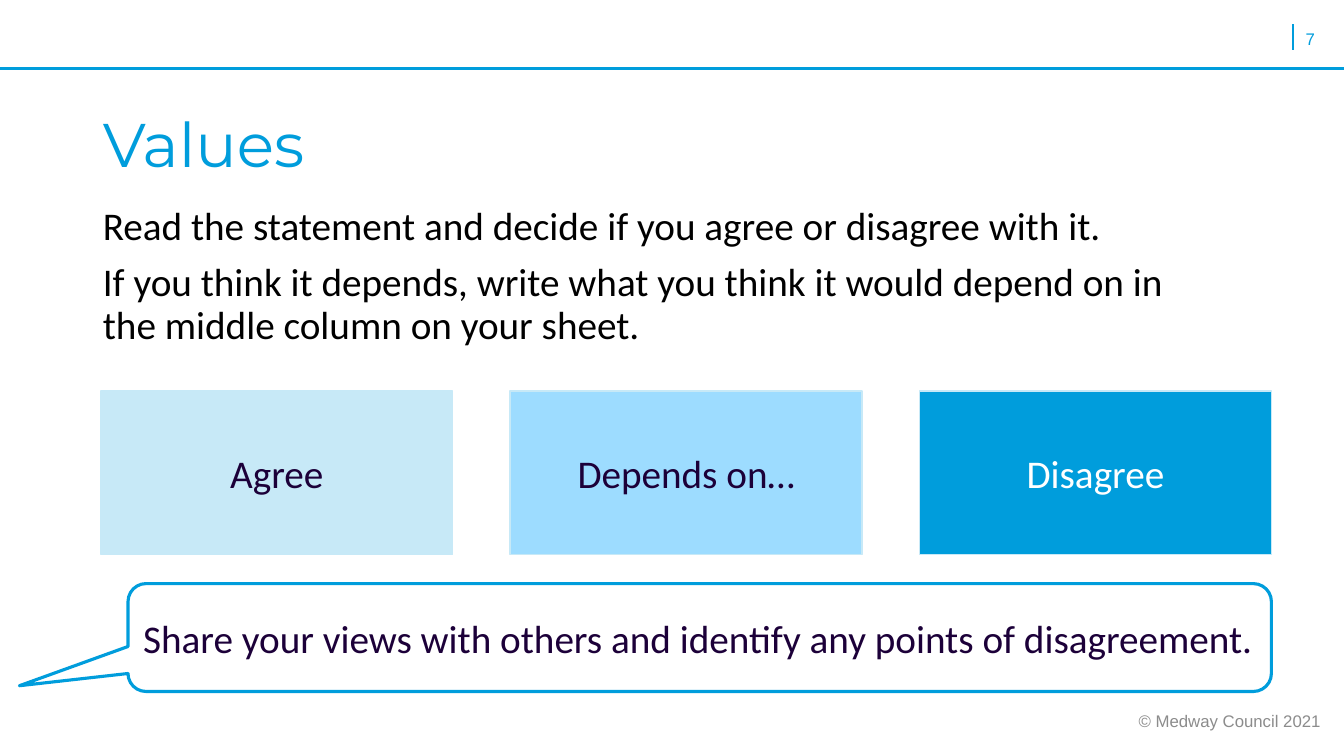
from lxml import etree
from pptx import Presentation
from pptx.dml.color import RGBColor
from pptx.enum.shapes import MSO_CONNECTOR, MSO_SHAPE
from pptx.enum.text import MSO_ANCHOR, MSO_AUTO_SIZE, PP_ALIGN
from pptx.oxml.ns import qn
from pptx.util import Inches, Pt

LEFT, CENTER, RIGHT = PP_ALIGN.LEFT, PP_ALIGN.CENTER, PP_ALIGN.RIGHT
TOP, MIDDLE = MSO_ANCHOR.TOP, MSO_ANCHOR.MIDDLE
NO_AUTOFIT = MSO_AUTO_SIZE.NONE
STRAIGHT = MSO_CONNECTOR.STRAIGHT
RECT, CALLOUT = MSO_SHAPE.RECTANGLE, MSO_SHAPE.ROUNDED_RECTANGULAR_CALLOUT

BLUE, PALE, SKY = "009DDC", "C7E9F7", "9DDCFF"
INK, BLACK, WHITE, GREY = "1C0039", "000000", "FFFFFF", "8C8C8C"


def rgb(value):
    return RGBColor.from_string(value)


class SlideBuilder:
    """Holds the fonts and the current slide."""

    heading_font, body_font, small_font = "Montserrat", "Calibri", "Arial"

    def __init__(self, prs):
        self.slide = prs.slides.add_slide(prs.slide_layouts[1])

    def set_text(self, sp, lines, size, color, font, align=LEFT, anchor=TOP,
                 spacing=1.0, gap=0):
        tf = sp.text_frame
        tf.word_wrap = True
        tf.auto_size = NO_AUTOFIT
        tf.vertical_anchor = anchor
        for i, line in enumerate(lines):
            p = tf.paragraphs[0] if i == 0 else tf.add_paragraph()
            pPr = p._p.get_or_add_pPr()
            pPr.set("marL", "0")
            pPr.set("indent", "0")
            etree.SubElement(pPr, qn("a:buNone"))
            p.alignment = align
            p.line_spacing = spacing
            p.space_before = Pt(gap if i else 0)
            r = p.add_run()
            r.text = line
            r.font.name, r.font.size = font, Pt(size)
            r.font.color.rgb = rgb(color)

    def placeholder(self, index, box, lines, size, color, font, gap=0):
        sp = self.slide.placeholders[index]
        sp.left, sp.top, sp.width, sp.height = map(Inches, box)
        self.set_text(sp, lines, size, color, font, spacing=0.9, gap=gap)

    def label(self, box, text, color, align=LEFT, anchor=TOP):
        sp = self.slide.shapes.add_textbox(*map(Inches, box))
        self.set_text(sp, [text], 12, color, self.small_font, align, anchor)

    def line(self, x1, y1, x2, y2, width):
        cn = self.slide.shapes.add_connector(
            STRAIGHT, *map(Inches, (x1, y1, x2, y2)))
        cn.line.color.rgb = rgb(BLUE)
        cn.line.width = Pt(width)
        etree.SubElement(cn._element.spPr, qn("a:effectLst"))

    def shape(self, kind, box, text, color, fill, outline, width, align=CENTER):
        sp = self.slide.shapes.add_shape(kind, *map(Inches, box))
        sp.shadow.inherit = False
        if fill:
            sp.fill.solid()
            sp.fill.fore_color.rgb = rgb(fill)
        else:
            sp.fill.background()
        sp.line.color.rgb = rgb(outline)
        sp.line.width = Pt(width)
        self.set_text(sp, [text], 28, color, self.body_font, align, MIDDLE)
        return sp


def main():
    prs = Presentation()
    prs.slide_width, prs.slide_height = Inches(13.33), Inches(7.5)
    s = SlideBuilder(prs)

    s.line(12.82, 0.24, 12.82, 0.5, 1.5)
    s.line(0, 0.68, 13.33, 0.68, 2.25)
    s.label((12.85, 0.24, 0.42, 0.26), "7", BLUE)
    s.label((10.86, 6.95, 2.34, 0.4), "© Medway Council 2021", GREY, RIGHT, MIDDLE)

    s.placeholder(0, (0.92, 1.08, 11.5, 0.9), ["Values"], 44, BLUE, s.heading_font)
    s.placeholder(1, (0.92, 2, 11.09, 1.62), [
        "Read the statement and decide if you agree or disagree with it.",
        "If you think it depends, write what you think it would depend on in "
        "the middle column on your sheet.",
    ], 28, BLACK, s.body_font, gap=10)

    answers = [("Agree", PALE, INK), ("Depends on…", SKY, INK),
               ("Disagree", BLUE, WHITE)]
    for i, (text, fill, color) in enumerate(answers):
        s.shape(RECT, (1 + 4.06 * i, 3.88, 3.49, 1.62), text, color, fill, PALE, 1)

    callout = s.shape(
        CALLOUT, (1.27, 5.79, 11.34, 1.07),
        "Share your views with others and identify any points of disagreement.",
        INK, None, BLUE, 2.25, LEFT)
    for i, value in enumerate((-0.595, 0.447, 0.167)):
        callout.adjustments[i] = value

    prs.save("out.pptx")


if __name__ == "__main__":
    main()
